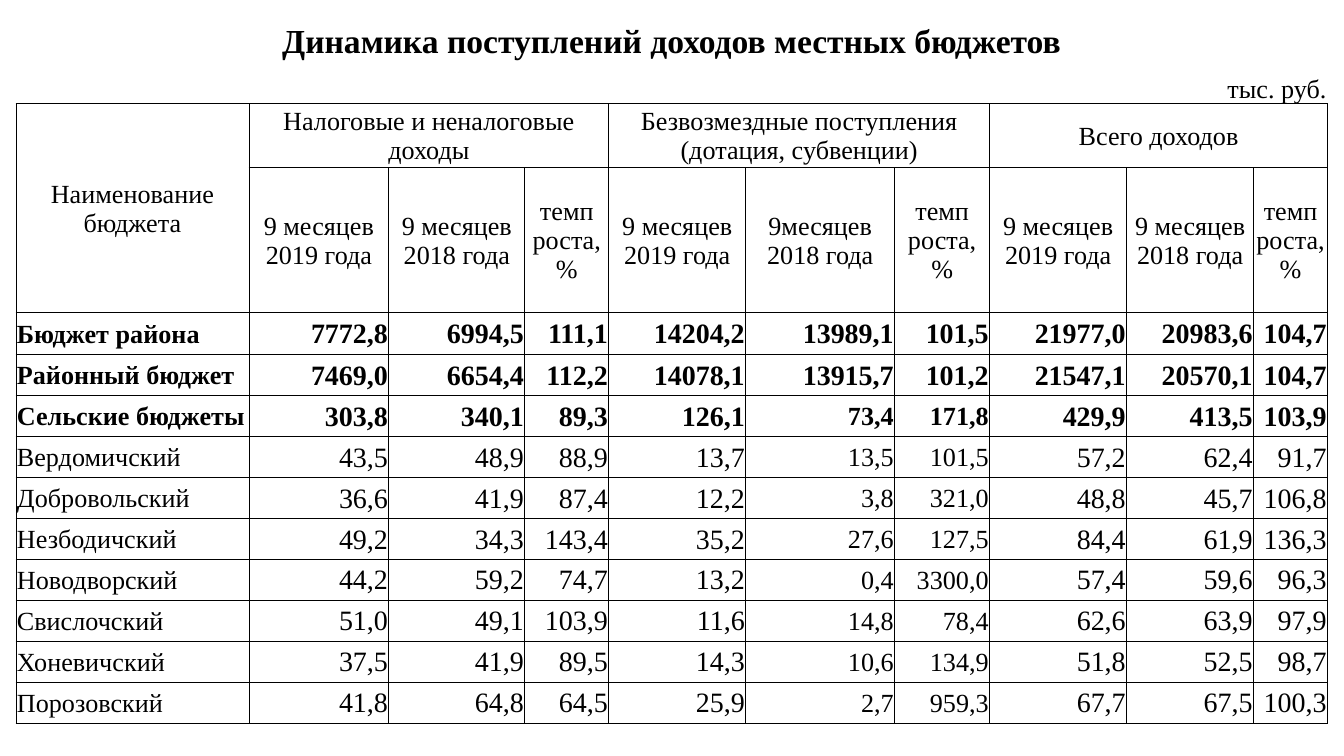
from lxml.etree import SubElement
from pptx import Presentation
from pptx.dml.color import RGBColor
from pptx.enum.text import MSO_ANCHOR, PP_ALIGN
from pptx.oxml.ns import qn
from pptx.util import Pt

SCALE = 914400 / 134.4
COLORS = {"text": "000000", "border": "000000"}
FONT = "Times New Roman"
NO_STYLE = "{2D5ABB26-0587-4C30-8999-92F81FD0307C}"

COL_WIDTHS = [233, 140, 100, 36, 84, 120, 17, 149, 95, 98, 39, 81, 46, 74]
ROW_HEIGHTS = [43, 43, 64, 145, 42] + [41] * 9
FIELD_SPANS = [(0, 1), (1, 1), (2, 2), (4, 1), (5, 2), (7, 1), (8, 1), (9, 2), (11, 2), (13, 1)]
UNIT_ROW_SPANS = [(1, 2), (3, 3), (6, 3), (10, 2)]
TOTAL_ROWS = 3

TITLE = "Динамика поступлений доходов местных бюджетов"
UNIT = "тыс. руб."
NAME_HEADER = "Наименование бюджета"
GROUPS = [
    (1, 4, "Налоговые и неналоговые доходы"),
    (5, 4, "Безвозмездные поступления (дотация, субвенции)"),
    (9, 5, "Всего доходов"),
]
YEAR_2019, YEAR_2018 = "9 месяцев\n2019 года", "9 месяцев\n2018 года"
GROWTH = "темп\nроста, %"
FIELDS = [
    YEAR_2019, YEAR_2018, GROWTH,
    "9 месяцев 2019 года", "9месяцев\n2018 года", GROWTH,
    YEAR_2019, YEAR_2018, GROWTH,
]
BUDGETS = [
    ("Бюджет района", "7772,8 6994,5 111,1 14204,2 13989,1 101,5 21977,0 20983,6 104,7"),
    ("Районный бюджет", "7469,0 6654,4 112,2 14078,1 13915,7 101,2 21547,1 20570,1 104,7"),
    ("Сельские бюджеты", "303,8 340,1 89,3 126,1 73,4 171,8 429,9 413,5 103,9"),
    ("Вердомичский", "43,5 48,9 88,9 13,7 13,5 101,5 57,2 62,4 91,7"),
    ("Добровольский", "36,6 41,9 87,4 12,2 3,8 321,0 48,8 45,7 106,8"),
    ("Незбодичский", "49,2 34,3 143,4 35,2 27,6 127,5 84,4 61,9 136,3"),
    ("Новодворский", "44,2 59,2 74,7 13,2 0,4 3300,0 57,4 59,6 96,3"),
    ("Свислочский", "51,0 49,1 103,9 11,6 14,8 78,4 62,6 63,9 97,9"),
    ("Хоневичский", "37,5 41,9 89,5 14,3 10,6 134,9 51,8 52,5 98,7"),
    ("Порозовский", "41,8 64,8 64,5 25,9 2,7 959,3 67,7 67,5 100,3"),
]


def px(n):
    """Convert pixels to EMU."""
    return round(n * SCALE)


def set_borders(cell, visible):
    """Draw the named sides of a cell and hide the others."""
    tc_pr = cell._tc.get_or_add_tcPr()
    for side in "LRTB":
        ln = SubElement(tc_pr, qn(f"a:ln{side}"), w=str(Pt(0.5)))
        if side in visible:
            fill = SubElement(ln, qn("a:solidFill"))
            SubElement(fill, qn("a:srgbClr"), val=COLORS["border"])
        else:
            SubElement(ln, qn("a:noFill"))


def prepare_cells(table):
    """Give every cell its margins, borders and empty fill."""
    for i, row in enumerate(table.rows):
        for cell in row.cells:
            cell.margin_left = cell.margin_right = cell.margin_top = px(1)
            cell.margin_bottom = 0
            set_borders(cell, ("", "B")[i] if i < 2 else "LRTB")
            cell.fill.background()


def merge(table, row, col, width, height=1):
    """Merge a block of cells and return its first cell."""
    cell = table.cell(row, col)
    if width * height > 1:
        cell.merge(table.cell(row + height - 1, col + width - 1))
    return cell


def write(cell, text, size=14, bold=False, align=PP_ALIGN.CENTER, anchor=MSO_ANCHOR.MIDDLE):
    """Write formatted text into a cell."""
    cell.vertical_anchor = anchor
    tf = cell.text_frame
    tf.text = text
    for p in tf.paragraphs:
        p.alignment = align
        p.font.name = FONT
        p.font.size = Pt(size)
        p.font.bold = bold
        p.font.color.rgb = RGBColor.from_string(COLORS["text"])


def add_header(table):
    """Fill the title, unit and column heading rows."""
    write(merge(table, 0, 0, len(COL_WIDTHS)), TITLE, 18, True, anchor=MSO_ANCHOR.BOTTOM)
    for col, width in UNIT_ROW_SPANS:
        merge(table, 1, col, width)
    write(merge(table, 1, 12, 2), UNIT, align=PP_ALIGN.RIGHT, anchor=MSO_ANCHOR.BOTTOM)
    write(merge(table, 2, 0, 1, 2), NAME_HEADER)
    for col, width, text in GROUPS:
        write(merge(table, 2, col, width), text)
    for (col, width), text in zip(FIELD_SPANS[1:], FIELDS):
        write(merge(table, 3, col, width), text)


def add_budgets(table):
    """Fill one row for each budget, totals in bold."""
    for i, (name, values) in enumerate(BUDGETS):
        bold = i < TOTAL_ROWS
        write(table.cell(i + 4, 0), name, 14, bold, PP_ALIGN.LEFT)
        for (col, width), value in zip(FIELD_SPANS[1:], values.split()):
            size = 14 if i >= 2 and col in (7, 8) else 15
            write(merge(table, i + 4, col, width), value, size, bold, PP_ALIGN.RIGHT)


def add_income_table(slide, left, top):
    """Place the income table at the given corner."""
    frame = slide.shapes.add_table(
        len(ROW_HEIGHTS), len(COL_WIDTHS),
        px(left), px(top), px(sum(COL_WIDTHS)), px(sum(ROW_HEIGHTS)),
    )
    table = frame.table
    table.first_row = table.horz_banding = False
    table._tbl.tblPr.find(qn("a:tableStyleId")).text = NO_STYLE
    for column, width in zip(table.columns, COL_WIDTHS):
        column.width = px(width)
    for row, height in zip(table.rows, ROW_HEIGHTS):
        row.height = px(height)
    prepare_cells(table)
    add_header(table)
    add_budgets(table)


def main():
    """Build the slide and save it."""
    prs = Presentation()
    prs.slide_width, prs.slide_height = px(1344), px(756)
    slide = prs.slides.add_slide(prs.slide_layouts[6])
    add_income_table(slide, 16, 18)
    prs.save("out.pptx")


if __name__ == "__main__":
    main()
